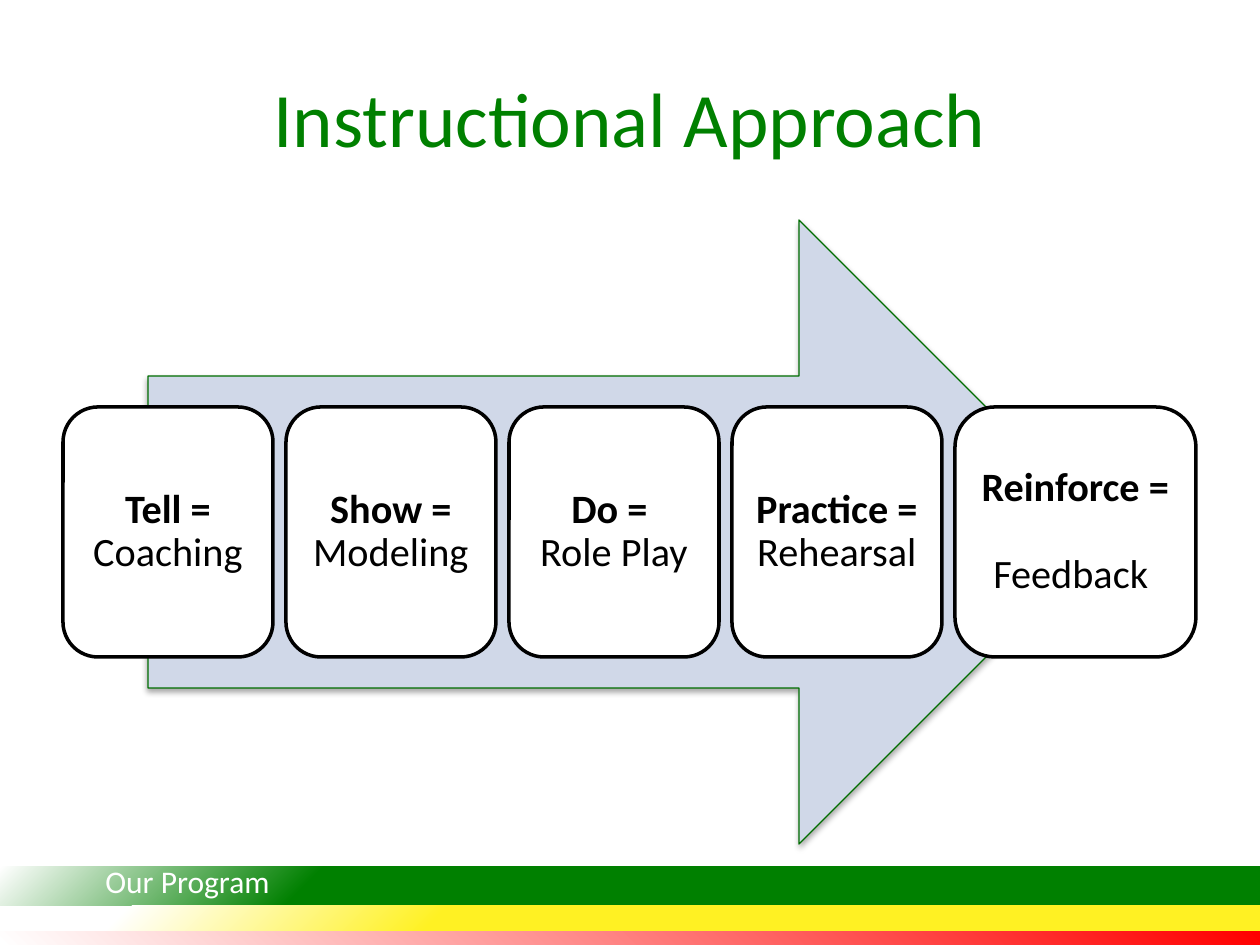
from pptx import Presentation
from pptx.dml.color import RGBColor
from pptx.enum.shapes import MSO_SHAPE
from pptx.enum.text import MSO_ANCHOR, PP_ALIGN
from pptx.oxml import parse_xml
from pptx.util import Pt

RECTANGLE, ROUNDED = MSO_SHAPE.RECTANGLE, MSO_SHAPE.ROUNDED_RECTANGLE
RIGHT_ARROW = MSO_SHAPE.RIGHT_ARROW
MIDDLE, CENTER = MSO_ANCHOR.MIDDLE, PP_ALIGN.CENTER

GREEN = RGBColor(0x00, 0x80, 0x00)
DARK_GREEN = RGBColor(0x00, 0x6E, 0x00)
PALE_BLUE = RGBColor(0xD0, 0xD8, 0xE8)
YELLOW = RGBColor(0xFF, 0xF1, 0x23)
RED = RGBColor(0xFF, 0x00, 0x00)
WHITE = RGBColor(0xFF, 0xFF, 0xFF)
BLACK = RGBColor(0x00, 0x00, 0x00)

FONT = "Calibri"
NS = 'xmlns:a="http://schemas.openxmlformats.org/drawingml/2006/main"'
SCALE = 914400 / 126

# Content
TITLE = "Instructional Approach"
FOOTER = "Our Program"
# paragraphs of (text, bold) runs, box width, gap after the first paragraph in points
STEPS = [
    ([[("Tell = ", True), ("Coaching", False)]], 210, 0),
    ([[("Show = ", True), ("Modeling", False)]], 210, 0),
    ([[("Do = ", True)], [("Role Play", False)]], 210, 0),
    ([[("Practice = ", True), ("Rehearsal", False)]], 210, 0),
    ([[("Reinforce = ", True)], [("Feedback ", False)]], 241, 25),
]
# top, height, colour, solid until %, white from %, focus corner
BANDS = [
    (931, 15, RED, 0, 100, 'l="100000" b="100000"'),
    (867, 39, GREEN, 75, 100, 'l="100000" t="100000"'),
    (906, 25, YELLOW, 65, 90, 'l="100000" t="100000"'),
]
STEP_LEFT, STEP_TOP, STEP_HEIGHT, STEP_GAP = 63, 407, 250, 13


def px(*lengths):
    return [round(length * SCALE) for length in lengths]


def format_run(run, size, color, bold=False):
    run.font.name, run.font.size, run.font.bold = FONT, Pt(size), bold
    run.font.color.rgb = color


def add_filled(kind, box, fill, line=None, line_width=0):
    shape = slide.shapes.add_shape(kind, *px(*box))
    shape.shadow.inherit = False
    shape.fill.solid()
    shape.fill.fore_color.rgb = fill
    if line is None:
        shape.line.fill.background()
    else:
        shape.line.color.rgb = line
        shape.line.width = Pt(line_width)
    return shape


def add_step(left, width, paragraphs, gap):
    step = add_filled(ROUNDED, (left, STEP_TOP, width, STEP_HEIGHT), WHITE, BLACK, 2)
    frame = step.text_frame
    frame.word_wrap = True
    frame.vertical_anchor = MIDDLE
    frame.margin_left, frame.margin_right, frame.margin_top, frame.margin_bottom = px(13, 13, 13, 13)
    for index, runs in enumerate(paragraphs):
        paragraph = frame.add_paragraph() if index else frame.paragraphs[0]
        paragraph.alignment = CENTER
        paragraph.line_spacing = 0.9
        paragraph.space_after = Pt(0 if index else gap)
        for text, bold in runs:
            run = paragraph.add_run()
            run.text = text
            format_run(run, 23, BLACK, bold)


def add_band(top, height, color, solid_until, white_from, focus):
    band = add_filled(RECTANGLE, (0, top, 1260, height), color)
    properties = band._element.spPr
    gradient = parse_xml(
        f'<a:gradFill {NS} rotWithShape="1"><a:gsLst>'
        f'<a:gs pos="{solid_until * 1000}"><a:srgbClr val="{color}"/></a:gs>'
        f'<a:gs pos="{white_from * 1000}"><a:srgbClr val="{WHITE}"/></a:gs>'
        f'</a:gsLst><a:path path="circle"><a:fillToRect {focus}/></a:path></a:gradFill>'
    )
    properties.replace(properties.find("{*}solidFill"), gradient)


prs = Presentation()
prs.slide_width, prs.slide_height = px(1260, 945)
slide = prs.slides.add_slide(prs.slide_layouts[5])

# Title
title = slide.shapes.title
title.left, title.top, title.width, title.height = px(63, 38, 1134, 157)
title.text_frame.text = TITLE
title.text_frame.vertical_anchor = MIDDLE
title.text_frame.paragraphs[0].alignment = CENTER
format_run(title.text_frame.paragraphs[0].runs[0], 44, GREEN)

# Arrow behind the steps, with a soft shadow below it
arrow = add_filled(RIGHT_ARROW, (148, 220, 963, 624), PALE_BLUE, DARK_GREEN, 0.75)
arrow._element.spPr.find("{*}effectLst").append(parse_xml(
    f'<a:outerShdw {NS} blurRad="39370" dist="22860" dir="5400000" rotWithShape="0">'
    f'<a:srgbClr val="{BLACK}"><a:alpha val="35000"/></a:srgbClr></a:outerShdw>'
))

# Steps from left to right
left = STEP_LEFT
for paragraphs, width, gap in STEPS:
    add_step(left, width, paragraphs, gap)
    left += width + STEP_GAP

# Footer bands and label
for band in BANDS:
    add_band(*band)
footer = slide.shapes.add_textbox(*px(93, 856, 242, 50)).text_frame
footer.word_wrap = True
footer.text = FOOTER
format_run(footer.paragraphs[0].runs[0], 18, WHITE)

prs.save("out.pptx")
